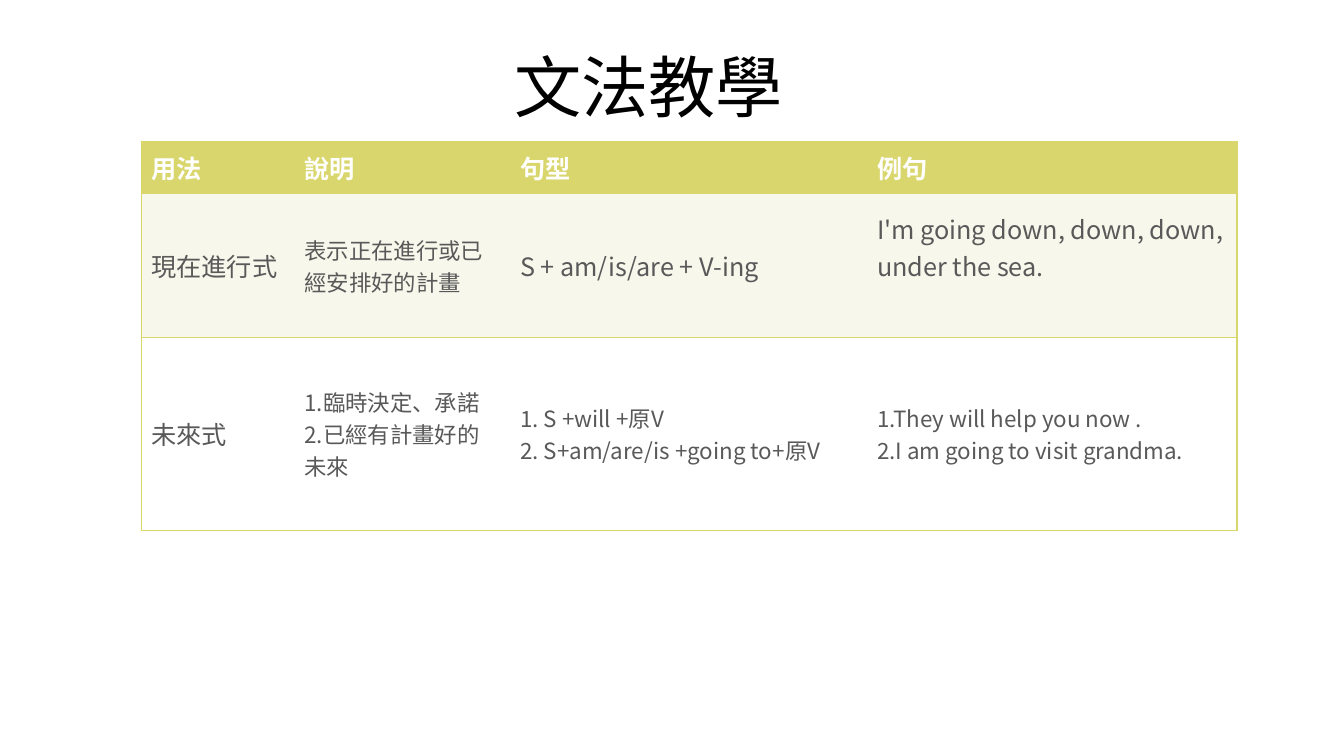
from lxml import etree
from pptx import Presentation
from pptx.dml.color import RGBColor
from pptx.enum.text import MSO_ANCHOR, MSO_AUTO_SIZE, PP_ALIGN
from pptx.oxml.ns import qn
from pptx.util import Inches, Pt

MIDDLE, BOTTOM = MSO_ANCHOR.MIDDLE, MSO_ANCHOR.BOTTOM
CENTER, LEFT = PP_ALIGN.CENTER, PP_ALIGN.LEFT
NO_FIT = MSO_AUTO_SIZE.NONE

FONT = "Noto Sans CJK SC"
BLACK = RGBColor(0x00, 0x00, 0x00)
GRAY = RGBColor(0x59, 0x59, 0x59)
WHITE = RGBColor(0xFF, 0xFF, 0xFF)
LIME = RGBColor(0xD9, 0xD6, 0x6D)
CREAM = RGBColor(0xF8, 0xF7, 0xEB)

EDGE = 1.4
COLS = [1.52, 2.14, 3.54, 3.67]
ROWS = [0.52, 1.43, 1.91]
FILLS = [LIME, CREAM, WHITE]
SIZES = [[18, 18, 18, 18], [18, 16, 18, 18], [18, 16, 16, 16]]
TEXTS = [
    ["用法", "說明", "句型", "例句"],
    ["現在進行式", "表示正在進行或已經安排好的計畫", "S + am/is/are + V-ing",
     "I'm going down, down, down, under the sea."],
    ["未來式", "1.臨時決定、承諾\n2.已經有計畫好的未來",
     "1. S +will +原V\n2. S+am/are/is +going to+原V",
     "1.They will help you now .\n2.I am going to visit grandma."],
]
SONG = (1, 3)  # the lyric sits one text line above the middle of its cell


def write(frame, text, size=18, color=GRAY, bold=False, align=LEFT, space=1.0):
    frame.word_wrap = True
    for i, line in enumerate(text.split("\n")):
        para = frame.add_paragraph() if i else frame.paragraphs[0]
        para.alignment, para.line_spacing = align, space
        run = para.add_run()
        run.text = line
        font = run.font
        font.size, font.bold, font.name = Pt(size), bold, FONT
        font.color.rgb = color
        east = etree.SubElement(run._r.get_or_add_rPr(), qn("a:ea"))
        east.set("typeface", FONT)


def border(cell, colors):
    """Draw the left, right, top and bottom lines; None hides a line."""
    props = cell._tc.get_or_add_tcPr()
    for i, (side, color) in enumerate(zip("LRTB", colors)):
        line = etree.Element(qn(f"a:ln{side}"), w=str(Pt(1)))
        if color is None:
            etree.SubElement(line, qn("a:noFill"))
        else:
            fill = etree.SubElement(line, qn("a:solidFill"))
            etree.SubElement(fill, qn("a:srgbClr"), val=str(color))
        props.insert(i, line)


def add_title(slide, text):
    title = slide.shapes.title
    title.left, title.top = Inches(1.31), 0
    title.width, title.height = Inches(10.25), Inches(1.31)
    frame = title.text_frame
    frame.auto_size, frame.vertical_anchor = NO_FIT, BOTTOM
    write(frame, text, size=48, color=BLACK, align=CENTER, space=0.9)


def add_grid(slide):
    frame = slide.shapes.add_table(
        len(ROWS), len(COLS), Inches(EDGE), Inches(EDGE),
        Inches(sum(COLS)), Inches(sum(ROWS)))
    table = frame.table
    for col, width in zip(table.columns, COLS):
        col.width = Inches(width)
    for r, height in enumerate(ROWS):
        table.rows[r].height = Inches(height)
        for c, text in enumerate(TEXTS[r]):
            cell = table.cell(r, c)
            cell.vertical_anchor = MIDDLE
            cell.fill.solid()
            cell.fill.fore_color.rgb = FILLS[r]
            if (r, c) == SONG:
                cell.margin_bottom = Inches(0.42)
            write(cell.text_frame, text, size=SIZES[r][c], bold=r == 0,
                  color=GRAY if r else WHITE)
            border(cell, [LIME if c == 0 else None,
                          LIME if c == len(COLS) - 1 else None, LIME, LIME])


def main():
    deck = Presentation()
    deck.slide_width, deck.slide_height = Inches(13.33), Inches(7.5)
    slide = deck.slides.add_slide(deck.slide_layouts[5])
    add_title(slide, "文法教學")
    add_grid(slide)
    deck.save("out.pptx")


if __name__ == "__main__":
    main()
